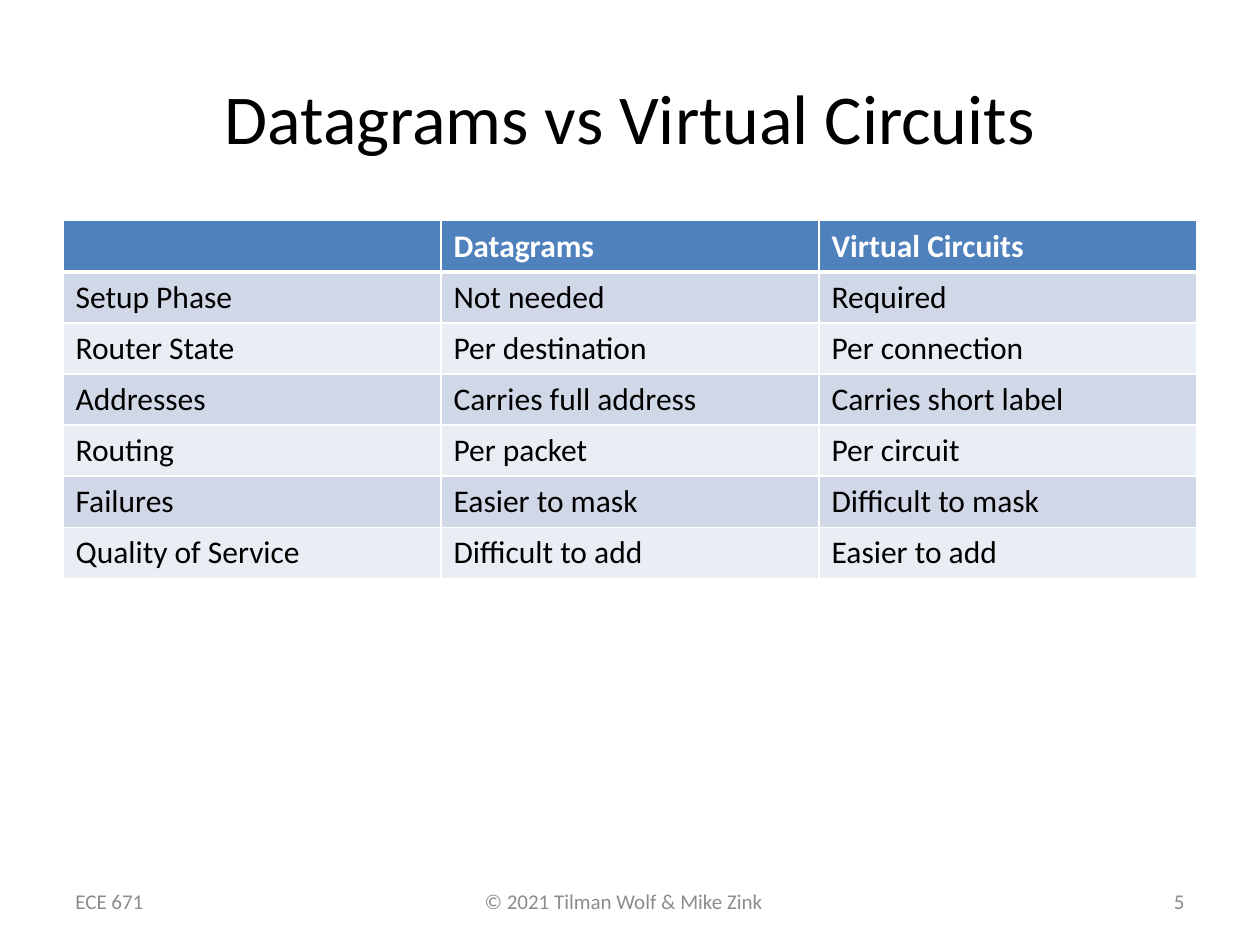
from lxml import etree
from pptx import Presentation
from pptx.dml.color import RGBColor
from pptx.enum.text import MSO_ANCHOR, PP_ALIGN
from pptx.oxml.ns import qn
from pptx.util import Cm, Pt

LEFT, CENTER, RIGHT = PP_ALIGN.LEFT, PP_ALIGN.CENTER, PP_ALIGN.RIGHT
TOP, MIDDLE = MSO_ANCHOR.TOP, MSO_ANCHOR.MIDDLE

FONT = "Calibri"
BLACK, WHITE, GREY = "000000", "FFFFFF", "8C8C8C"
HEADER_FILL = "4F81BD"
BAND_FILLS = ["D0D8E8", "E9EDF4"]

TEXTS = [
    ("© 2021 Tilman Wolf & Mike Zink", (9.52, 17.78, 6.2, 1.27), 12, GREY, LEFT, TOP, False),
    ("Datagrams vs Virtual Circuits", (1.27, 0.76, 22.86, 3.18), 40, BLACK, CENTER, MIDDLE, True),
    ("ECE 671", (1.27, 17.65, 5.92, 1.02), 12, GREY, LEFT, MIDDLE, True),
    ("5", (18.21, 17.65, 5.92, 1.02), 12, GREY, RIGHT, MIDDLE, True),
]

ROWS = [
    ("", "Datagrams", "Virtual Circuits"),
    ("Setup Phase", "Not needed", "Required"),
    ("Router State", "Per destination", "Per connection"),
    ("Addresses", "Carries full address", "Carries short label"),
    ("Routing", "Per packet", "Per circuit"),
    ("Failures", "Easier to mask", "Difficult to mask"),
    ("Quality of Service", "Difficult to add", "Easier to add"),
]
TABLE_LEFT, TABLE_TOP = 1.27, 4.45
COL_WIDTH, ROW_HEIGHT = 7.62, 1.03


def rgb(color):
    return RGBColor.from_string(color)


def style(p, size, color, bold=False):
    p.font.name = FONT
    p.font.size = Pt(size)
    p.font.bold = bold
    p.font.color.rgb = rgb(color)


def add_text(slide, text, box, size, color, align, anchor, wrap):
    tf = slide.shapes.add_textbox(*map(Cm, box)).text_frame
    tf.word_wrap = wrap
    tf.vertical_anchor = anchor
    p = tf.paragraphs[0]
    p.text = text
    p.alignment = align
    style(p, size, color)


def set_borders(cell, widths):
    tcPr = cell._tc.get_or_add_tcPr()
    for i, (side, width) in enumerate(widths.items()):
        ln = etree.Element(qn(f"a:ln{side}"), w=str(Pt(width)))
        fill = etree.SubElement(ln, qn("a:solidFill"))
        etree.SubElement(fill, qn("a:srgbClr"), val=WHITE)
        tcPr.insert(i, ln)


def add_table(slide):
    n_rows, n_cols = len(ROWS), len(ROWS[0])
    table = slide.shapes.add_table(
        n_rows, n_cols, Cm(TABLE_LEFT), Cm(TABLE_TOP),
        Cm(n_cols * COL_WIDTH), Cm(n_rows * ROW_HEIGHT)).table
    for i, row in enumerate(ROWS):
        header = i == 0
        table.rows[i].height = Cm(ROW_HEIGHT)
        fill = HEADER_FILL if header else BAND_FILLS[(i - 1) % 2]
        widths = {"L": 1, "R": 1, "T": 3 if i == 1 else 1, "B": 3 if header else 1}
        for j, text in enumerate(row):
            cell = table.cell(i, j)
            cell.text = text
            cell.fill.solid()
            cell.fill.fore_color.rgb = rgb(fill)
            style(cell.text_frame.paragraphs[0], 18, WHITE if header else BLACK, header)
            set_borders(cell, widths)


def main():
    prs = Presentation()
    prs.slide_width, prs.slide_height = Cm(25.4), Cm(19.05)
    slide = prs.slides.add_slide(prs.slide_layouts[6])
    for item in TEXTS:
        add_text(slide, *item)
    add_table(slide)
    prs.save("out.pptx")


if __name__ == "__main__":
    main()
